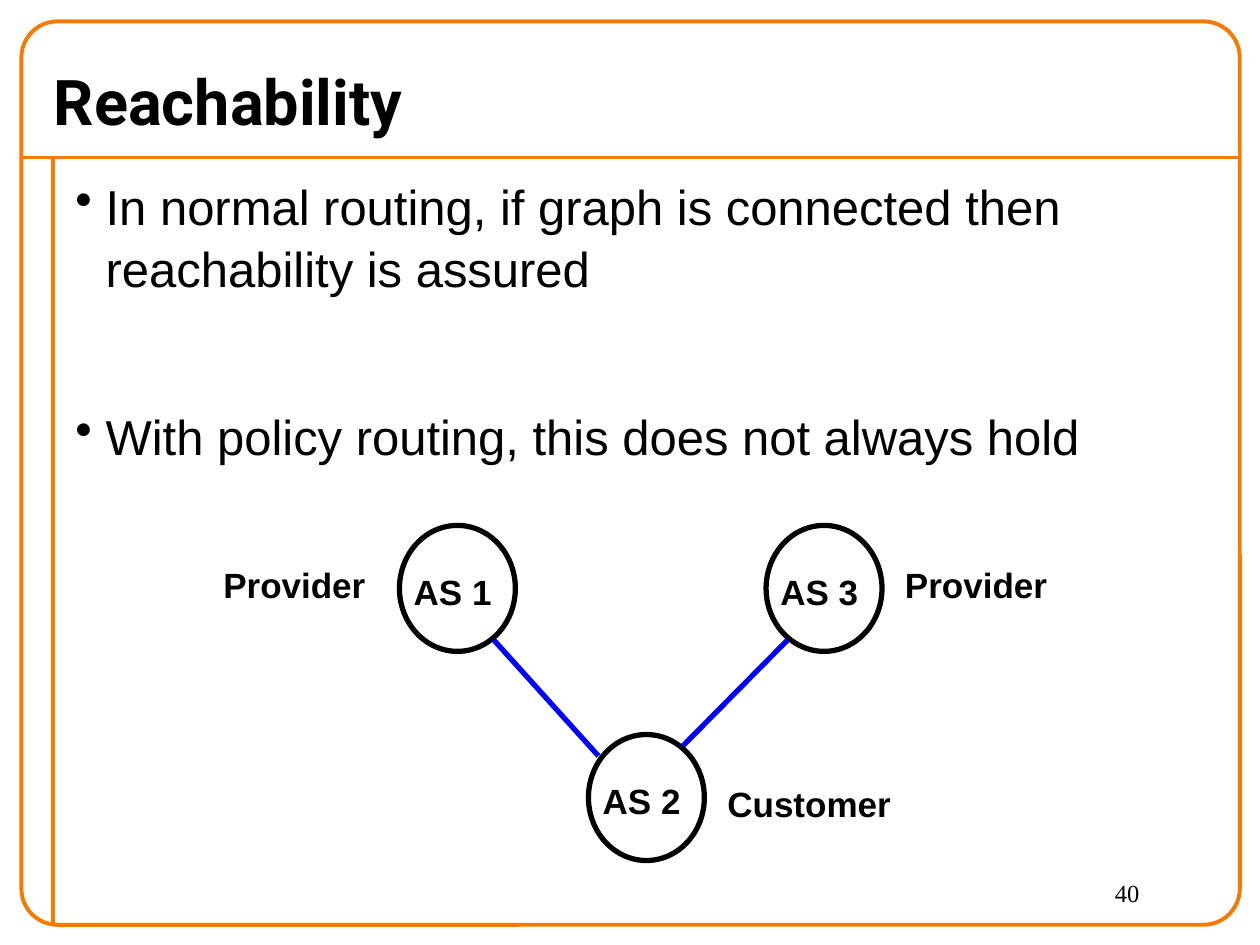
import pptx
import pptx.dml.color
import pptx.enum.shapes
import pptx.enum.text
import pptx.util
from lxml import etree

Inches, Pt = pptx.util.Inches, pptx.util.Pt
SHAPES = pptx.enum.shapes.MSO_SHAPE
ALIGN = pptx.enum.text.PP_ALIGN
ANCHOR = pptx.enum.text.MSO_ANCHOR

ORANGE, BLACK, BLUE = "F47A00", "000000", "0000FF"

TITLE = "Reachability"
PAGE_NUMBER = "40"
# text, points of space before
BULLETS = [
    ("In normal routing, if graph is connected then reachability is assured", 0),
    ("With policy routing, this does not always hold", 61),
]
RULES = [((0.17, 1.25), (9.83, 1.25)), ((0.42, 1.25), (0.42, 7.33))]

NODE_SIZE = (0.92, 1)
NODES = {"AS 2": (4.67, 5.83), "AS 3": (6.08, 4.17), "AS 1": (3.17, 4.17)}
LINKS = [((5.42, 5.92), (6.25, 5.08)), ((4.75, 6), (3.92, 5.08))]
# text, left, top, width
ROLES = [
    ("Provider", 1.67, 4.42, 1.33),
    ("Provider", 7.08, 4.42, 1.33),
    ("Customer", 5.65, 6.16, 1.52),
]


def color(hex_text):
    return pptx.dml.color.RGBColor.from_string(hex_text)


def style(para, size, font="Arial", bold=False):
    for span in para.runs:
        span.font.size = Pt(size)
        span.font.name = font
        span.font.bold = bold
        span.font.color.rgb = color(BLACK)


def add_text(page, text, area, size, font="Arial", bold=False,
             align=ALIGN.LEFT, anchor=ANCHOR.TOP, wrap=True):
    box = page.shapes.add_textbox(*map(Inches, area))
    frame = box.text_frame
    frame.word_wrap = wrap
    frame.vertical_anchor = anchor
    frame.text = text
    frame.paragraphs[0].alignment = align
    style(frame.paragraphs[0], size, font, bold)
    return box


def add_label(page, text, left, top, width):
    add_text(page, text, (left, top, width, 0.43), 20, bold=True,
             align=ALIGN.RIGHT, anchor=ANCHOR.MIDDLE, wrap=False)


def add_outline(page, kind, area, line_color, weight):
    shape = page.shapes.add_shape(kind, *map(Inches, area))
    shape.shadow.inherit = False
    shape.fill.background()
    shape.line.color.rgb = color(line_color)
    shape.line.width = Pt(weight)
    return shape


def add_line(page, start, end, line_color, weight):
    line = page.shapes.add_connector(
        pptx.enum.shapes.MSO_CONNECTOR.STRAIGHT, *map(Inches, start + end))
    line.line.color.rgb = color(line_color)
    line.line.width = Pt(weight)
    etree.SubElement(line._element.spPr, pptx.oxml.ns.qn("a:effectLst"))


def add_bullets(page, area):
    frame = add_text(page, "\n".join(text for text, _ in BULLETS), area, 28).text_frame
    for para, (_, space) in zip(frame.paragraphs, BULLETS):
        style(para, 28)
        para.line_spacing = 1.05
        para.space_before = Pt(space)
        properties = para._p.get_or_add_pPr()
        properties.set("marL", str(Inches(0.24)))
        properties.set("indent", str(Inches(-0.24)))
        etree.SubElement(properties, pptx.oxml.ns.qn("a:buChar"), char="•")


def main():
    deck = pptx.Presentation()
    deck.slide_width, deck.slide_height = Inches(10), Inches(7.5)
    page = deck.slides.add_slide(deck.slide_layouts[6])

    for start, end in RULES:
        add_line(page, start, end, ORANGE, 2.25)
    border = add_outline(page, SHAPES.ROUNDED_RECTANGLE, (0.17, 0.17, 9.67, 7.17), ORANGE, 2.25)
    border.adjustments[0] = 0.04

    add_text(page, PAGE_NUMBER, (8.75, 6.92, 1, 0.42), 14, "Times New Roman")
    add_text(page, TITLE, (0.33, 0.42, 9.67, 0.75), 36, "Roboto", True, anchor=ANCHOR.MIDDLE)
    add_bullets(page, (0.5, 1.33, 9.25, 6))

    for name, (left, top) in NODES.items():
        add_outline(page, SHAPES.OVAL, (left, top, *NODE_SIZE), BLACK, 3)
        add_label(page, name, left + 0.01, top + 0.31, 0.82)
    for start, end in LINKS:
        add_line(page, start, end, BLUE, 3)
    for role in ROLES:
        add_label(page, *role)

    deck.save("out.pptx")


if __name__ == "__main__":
    main()
